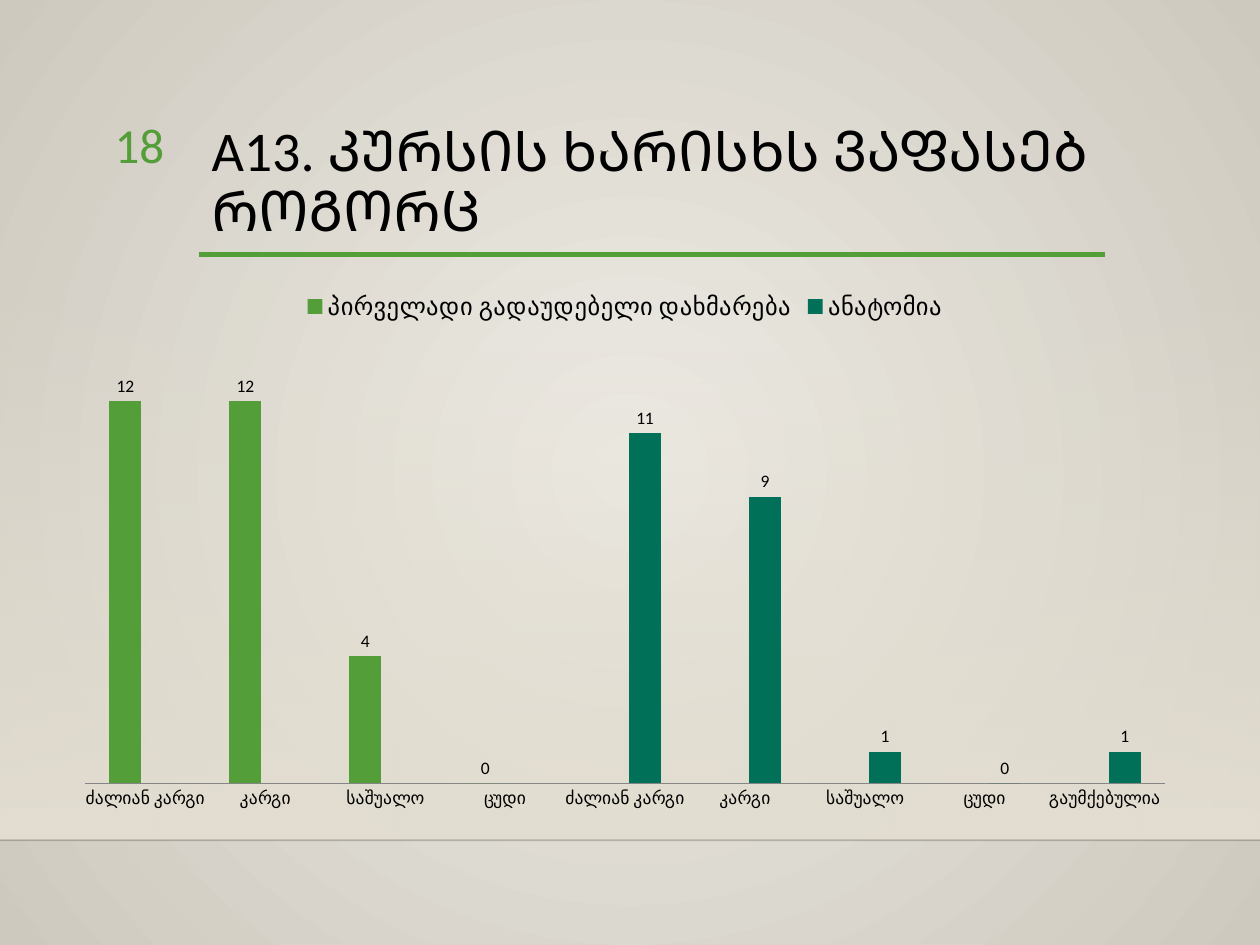
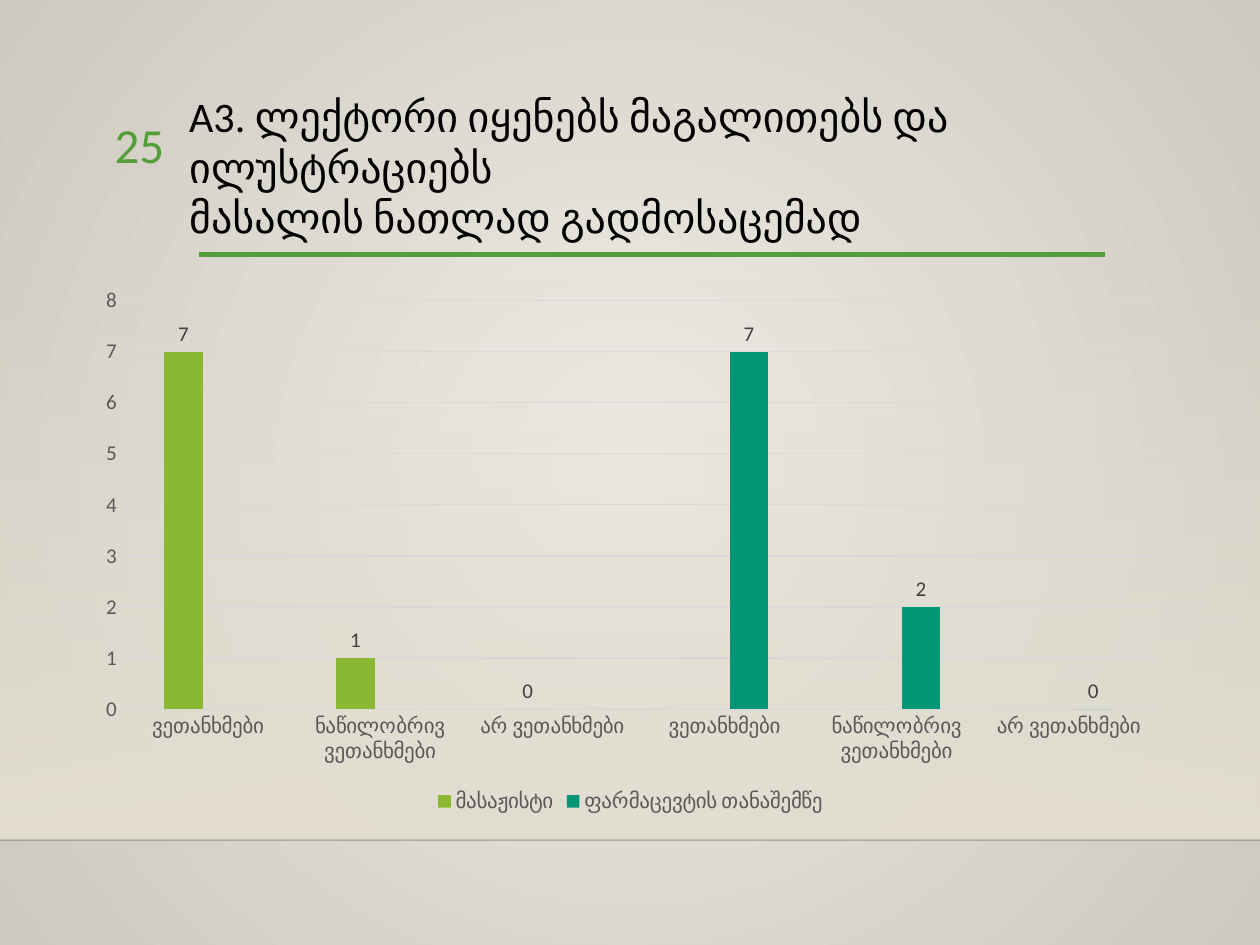
from dataclasses import dataclass

from lxml import etree
from pptx import Presentation
from pptx.chart.data import CategoryChartData
from pptx.dml.color import RGBColor
from pptx.enum.chart import XL_CHART_TYPE, XL_LABEL_POSITION, XL_LEGEND_POSITION, XL_TICK_MARK
from pptx.enum.shapes import MSO_CONNECTOR, MSO_SHAPE
from pptx.enum.text import MSO_ANCHOR, MSO_AUTO_SIZE, PP_ALIGN
from pptx.oxml.ns import qn
from pptx.util import Cm, Pt

COLUMN = XL_CHART_TYPE.COLUMN_CLUSTERED
OUT_END = XL_LABEL_POSITION.OUTSIDE_END
TOP, BOTTOM = XL_LEGEND_POSITION.TOP, XL_LEGEND_POSITION.BOTTOM
NO_TICK = XL_TICK_MARK.NONE
STRAIGHT = MSO_CONNECTOR.STRAIGHT
RECT = MSO_SHAPE.RECTANGLE
HIGH, MIDDLE = MSO_ANCHOR.TOP, MSO_ANCHOR.MIDDLE
FIXED = MSO_AUTO_SIZE.NONE
LEFT, RIGHT = PP_ALIGN.LEFT, PP_ALIGN.RIGHT


@dataclass(frozen=True)
class Theme:
    font: str = "Calibri"
    black: str = "000000"
    green: str = "549E39"
    pine: str = "017058"
    lime: str = "8AB833"
    teal: str = "029676"
    sand: str = "E3DED1"
    glow: str = "EEECE6"
    edge: str = "CEC9BE"
    axis: str = "868686"
    grid: str = "D9D9D9"
    gray: str = "595959"
    dark: str = "404040"
    number: int = 28
    small: int = 10
    label: int = 12
    legend: int = 14


theme = Theme()


def put(thing, **values):
    for name, value in values.items():
        setattr(thing, name, value)


def ink(font, size, color):
    put(font, name=theme.font, size=Pt(size), bold=False)
    font.color.rgb = RGBColor.from_string(color)


# What each slide holds
pages = [
    dict(
        number="18", title="A13. ᲙᲣᲠᲡᲘᲡ ᲮᲐᲠᲘᲡᲮᲡ ᲕᲐᲤᲐᲡᲔᲑ ᲠᲝᲒᲝᲠᲪ",
        box=(4.01, 2.24, 18.26, 2.92), size=32, space=0.9, anchor=MIDDLE,
        area=(1.27, 5.59, 22.66, 10.92),
        cats=["ძალიან კარგი", "კარგი", "საშუალო", "ცუდი"] * 2 + ["გაუმქებულია"],
        series=[
            ("პირველადი გადაუდებელი დახმარება", [12, 12, 4, 0] + [None] * 5, theme.green),
            ("ანატომია", [None] * 4 + [11, 9, 1, 0, 1], theme.pine),
        ],
        plot=dict(gap_width=150, overlap=-25),
        scale=dict(maximum_scale=14, major_unit=2, visible=False, has_major_gridlines=False),
        text=(theme.small, theme.black), label=(theme.small, theme.black),
        key=(theme.legend, theme.black), side=TOP, base=theme.axis,
    ),
    dict(
        number="25",
        title="A3. ლექტორი იყენებს მაგალითებს და ილუსტრაციებს\nმასალის ნათლად გადმოსაცემად",
        box=(3.56, 1.7, 21.77, 3.07), size=24, space=1.0, anchor=HIGH,
        area=(1.7, 5.59, 22.02, 10.92),
        cats=["ვეთანხმები", "ნაწილობრივ ვეთანხმები", "არ ვეთანხმები"] * 2,
        series=[
            ("მასაჟისტი", [7, 1, 0] + [None] * 3, theme.lime),
            ("ფარმაცევტის თანაშემწე", [None] * 3 + [7, 2, 0], theme.teal),
        ],
        plot=dict(gap_width=219, overlap=-27),
        scale=dict(maximum_scale=8, major_unit=1, visible=True, has_major_gridlines=True),
        text=(theme.label, theme.gray), label=(theme.label, theme.dark),
        key=(theme.label, theme.gray), side=BOTTOM, base=theme.grid,
    ),
]

# Lines on every slide: start, end, colour, width, opacity in percent
lines = [
    ((0, 16.94), (25.4, 16.94), theme.black, 1, 20),
    ((4.01, 5.13), (22.28, 5.13), theme.green, 2.5, 100),
]

deck = Presentation()
put(deck, slide_width=Cm(25.4), slide_height=Cm(19.05))

# Round glow behind all slides
master = deck.slide_master
fill = master.background.fill
fill.gradient()
for stop, color in zip(fill.gradient_stops, (theme.glow, theme.edge)):
    stop.color.rgb = RGBColor.from_string(color)
grad = master.element.find(".//" + qn("a:gradFill"))
grad.remove(grad.find(qn("a:lin")))
ring = etree.SubElement(grad, qn("a:path"), path="circle")
etree.SubElement(ring, qn("a:fillToRect"), dict.fromkeys("ltrb", "50000"))

for page in pages:
    slide = deck.slides.add_slide(deck.slide_layouts[5])
    shapes = slide.shapes

    # Band that fades in downwards
    band = shapes.add_shape(RECT, 0, Cm(5.59), Cm(25.4), Cm(11.33))
    band.shadow.inherit = False
    band.line.fill.background()
    band.fill.gradient()
    band.fill.gradient_angle = 270
    for stop in band.fill.gradient_stops:
        stop.color.rgb = RGBColor.from_string(theme.sand)
    first = band.element.find(".//" + qn("a:srgbClr"))
    etree.SubElement(first, qn("a:alpha"), val="0")

    # Floor line and title rule
    for start, end, color, width, alpha in lines:
        line = shapes.add_connector(STRAIGHT, *map(Cm, start + end))
        line.line.width = Pt(width)
        line.line.color.rgb = RGBColor.from_string(color)
        tint = line.element.find(".//" + qn("a:srgbClr"))
        etree.SubElement(tint, qn("a:alpha"), val=str(alpha * 1000))
        etree.SubElement(line.element.spPr, qn("a:effectLst"))

    # Title and slide number
    title = shapes.title
    number = shapes.add_textbox(*map(Cm, (1.35, 2.21, 2.21, 1.4)))
    put(title, **dict(zip(("left", "top", "width", "height"), map(Cm, page["box"]))))
    for shape, text, size, color, align, space, anchor in (
        (title, page["title"], page["size"], theme.black, LEFT, page["space"], page["anchor"]),
        (number, page["number"], theme.number, theme.green, RIGHT, 1.0, MIDDLE),
    ):
        frame = shape.text_frame
        put(frame, text=text, word_wrap=True, auto_size=FIXED, vertical_anchor=anchor)
        for para in frame.paragraphs:
            put(para, alignment=align, line_spacing=space)
            ink(para.font, size, color)

    # Chart
    data = CategoryChartData()
    data.categories = page["cats"]
    for name, values, color in page["series"]:
        data.add_series(name, values)
    chart = shapes.add_chart(COLUMN, *map(Cm, page["area"]), data).chart
    put(chart, has_title=False, has_legend=True)
    ink(chart.font, theme.small, theme.black)
    put(chart.legend, position=page["side"], include_in_layout=False)
    ink(chart.legend.font, *page["key"])

    # Columns and their values
    plot = chart.plots[0]
    put(plot, vary_by_categories=False, **page["plot"])
    for series, (name, values, color) in zip(plot.series, page["series"]):
        series.format.fill.solid()
        series.format.fill.fore_color.rgb = RGBColor.from_string(color)
        put(series, invert_if_negative=False)
        put(series.data_labels, show_value=True, position=OUT_END)
        ink(series.data_labels.font, *page["label"])

    # Axes
    across, up = chart.category_axis, chart.value_axis
    put(up, minimum_scale=0, **page["scale"])
    for axis in (across, up):
        put(axis, major_tick_mark=NO_TICK, minor_tick_mark=NO_TICK)
        ink(axis.tick_labels.font, *page["text"])
    up.format.line.fill.background()
    rules = [(across.format.line, page["base"])]
    if up.has_major_gridlines:
        rules.append((up.major_gridlines.format.line, theme.grid))
    for rule, color in rules:
        rule.width = Pt(0.75)
        rule.color.rgb = RGBColor.from_string(color)

deck.save("out.pptx")
